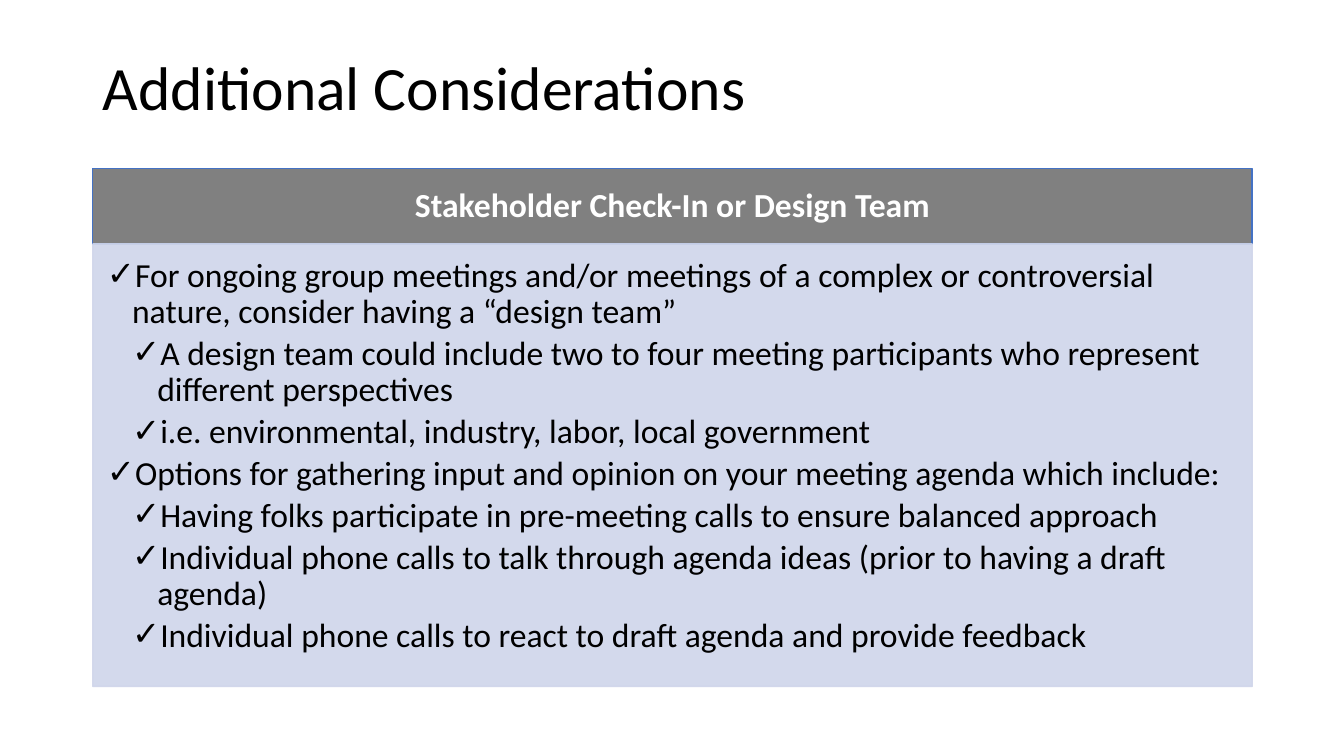
from lxml import etree
from pptx import Presentation
from pptx.dml.color import RGBColor
from pptx.enum.shapes import MSO_SHAPE
from pptx.enum.text import MSO_ANCHOR, MSO_AUTO_SIZE, PP_ALIGN
from pptx.oxml.ns import qn
from pptx.util import Inches, Pt

RECT = MSO_SHAPE.RECTANGLE
TOP, MIDDLE = MSO_ANCHOR.TOP, MSO_ANCHOR.MIDDLE
LEFT, CENTER = PP_ALIGN.LEFT, PP_ALIGN.CENTER
NO_FIT = MSO_AUTO_SIZE.NONE

THEME = {
    "font": "Calibri", "title_size": 44, "text_size": 24,
    "text": "000000", "heading_text": "FFFFFF",
    "heading": "808080", "heading_line": "4472C4",
    "panel": "CFD5EA", "panel_opacity": 90,
}

# Layout in inches: one column, three stacked rows
SLIDE_W, SLIDE_H = 13.33, 7.5
COL_X, COL_W = 0.92, 11.5
TITLE_Y, TITLE_H = 0.4, 0.99
HEADING_Y, HEADING_H = 1.67, 0.75
PANEL_Y, PANEL_H = HEADING_Y + HEADING_H, 4.39
INDENT = 0.25

TITLE = "Additional Considerations"
HEADING = "Stakeholder Check-In or Design Team"
POINTS = [
    (0, "For ongoing group meetings and/or meetings of a complex or "
        "controversial nature, consider having a “design team”"),
    (1, "A design team could include two to four meeting participants who "
        "represent different perspectives"),
    (1, "i.e. environmental, industry, labor, local government"),
    (0, "Options for gathering input and opinion on your meeting agenda "
        "which include:"),
    (1, "Having folks participate in pre-meeting calls to ensure balanced "
        "approach"),
    (1, "Individual phone calls to talk through agenda ideas (prior to having "
        "a draft agenda)"),
    (1, "Individual phone calls to react to draft agenda and provide feedback"),
]


def set_attrs(obj, values):
    for name, value in values.items():
        setattr(obj, name, value)


def place(sp, y, h):
    """Put a shape in the column, at a row's top and height."""
    set_attrs(sp, {"left": Inches(COL_X), "top": Inches(y),
                   "width": Inches(COL_W), "height": Inches(h)})


def paint(sp, fill, line, opacity=100):
    sp.fill.solid()
    sp.fill.fore_color.rgb = RGBColor.from_string(fill)
    sp.line.color.rgb = RGBColor.from_string(line)
    sp.line.width = Pt(1)
    if opacity < 100:
        for color in sp._element.spPr.iter(qn("a:srgbClr")):
            etree.SubElement(color, qn("a:alpha"), val=str(opacity * 1000))


def set_frame(tf, anchor, margins):
    left, top, right, bottom = map(Inches, margins)
    set_attrs(tf, {"word_wrap": True, "auto_size": NO_FIT,
                   "vertical_anchor": anchor,
                   "margin_left": left, "margin_top": top,
                   "margin_right": right, "margin_bottom": bottom})


def write(p, text, size, color, align=LEFT, bold=False, after=0):
    set_attrs(p, {"alignment": align, "line_spacing": 0.9,
                  "space_before": Pt(0), "space_after": Pt(after)})
    r = p.add_run()
    r.text = text
    set_attrs(r.font, {"name": THEME["font"], "size": Pt(size), "bold": bold})
    r.font.color.rgb = RGBColor.from_string(color)


def add_check(p, level):
    p.level = level
    pPr = p._p.get_or_add_pPr()
    pPr.set("marL", str(Inches(INDENT * (level + 1))))
    pPr.set("indent", str(-Inches(INDENT)))
    etree.SubElement(pPr, qn("a:buChar"), char="✓")


def fill_title(sp):
    place(sp, TITLE_Y, TITLE_H)
    set_frame(sp.text_frame, MIDDLE, (0.1, 0.05, 0.1, 0.05))
    write(sp.text_frame.paragraphs[0], TITLE, THEME["title_size"], THEME["text"])


def add_heading(slide):
    sp = slide.shapes.add_shape(RECT, 0, 0, 0, 0)
    place(sp, HEADING_Y, HEADING_H)
    sp.shadow.inherit = False
    paint(sp, THEME["heading"], THEME["heading_line"])
    set_frame(sp.text_frame, MIDDLE, (0.19, 0.11, 0.19, 0.11))
    write(sp.text_frame.paragraphs[0], HEADING, THEME["text_size"],
          THEME["heading_text"], align=CENTER, bold=True)


def fill_panel(sp):
    place(sp, PANEL_Y, PANEL_H)
    paint(sp, THEME["panel"], THEME["panel"], THEME["panel_opacity"])
    tf = sp.text_frame
    set_frame(tf, TOP, (0.14, 0.14, 0.19, 0.21))
    for i, (level, text) in enumerate(POINTS):
        p = tf.add_paragraph() if i else tf.paragraphs[0]
        write(p, text, THEME["text_size"], THEME["text"], after=4)
        add_check(p, level)


def main():
    prs = Presentation()
    prs.slide_width, prs.slide_height = Inches(SLIDE_W), Inches(SLIDE_H)
    slide = prs.slides.add_slide(prs.slide_layouts[1])
    body = slide.placeholders[1]

    fill_title(slide.shapes.title)
    add_heading(slide)
    fill_panel(body)
    # The panel overlaps the heading's lower edge
    slide.shapes._spTree.append(body._element)

    prs.save("out.pptx")


if __name__ == "__main__":
    main()
